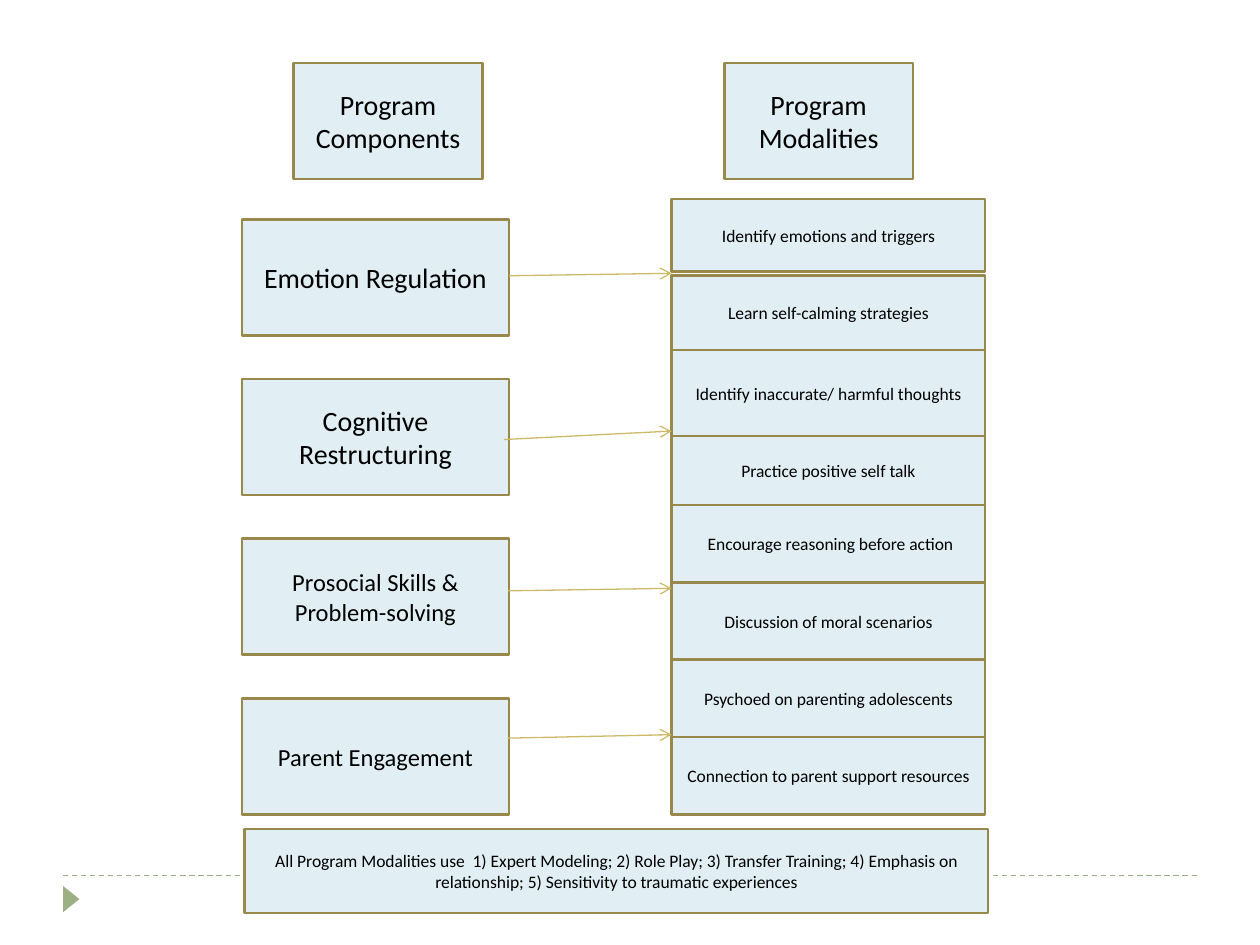
from lxml import etree
from pptx import Presentation
from pptx import util as u
from pptx.dml.color import RGBColor
from pptx.enum import dml, shapes, text
from pptx.oxml.ns import qn

# Content
HEADINGS = [("Program Components", 5.92), ("Program Modalities", 14.6)]  # text, left
COMPONENTS = [  # text, type size
    ("Emotion Regulation", "large"),
    ("Cognitive Restructuring", "large"),
    ("Prosocial Skills & Problem-solving", "medium"),
    ("Parent Engagement", "medium"),
]
MODALITIES = [  # text, height, gap below
    ("Identify emotions and triggers", 1.47, 0.08),
    ("Learn self-calming strategies", 1.5, 0),
    ("Identify inaccurate/ harmful thoughts", 1.73, 0),
    ("Practice positive self talk", 1.39, 0),
    (" Encourage reasoning before action", 1.56, 0),
    ("Discussion of moral scenarios", 1.56, 0),
    ("Psychoed on parenting adolescents", 1.56, 0),
    ("Connection to parent support resources", 1.56, 0),
]
SUMMARY = (
    "All Program Modalities use  1) Expert Modeling; 2) Role Play; "
    "3) Transfer Training; 4) Emphasis on relationship; "
    "5) Sensitivity to traumatic experiences"
)
ARROWS = [  # start x, start y, end y
    (10.26, 5.56, 5.51),
    (10.16, 8.86, 8.69),
    (10.24, 11.91, 11.86),
    (10.24, 14.88, 14.81),
]

THEME = {
    "font": "Calibri",
    "text": RGBColor(0x00, 0x00, 0x00),
    "box": RGBColor(0xE1, 0xEF, 0xF4),
    "border": RGBColor(0x98, 0x89, 0x4B),
    "arrow": RGBColor(0xCE, 0xB9, 0x66),
    "accent": RGBColor(0x9C, 0xB0, 0x84),
    "large": u.Pt(16),
    "medium": u.Pt(14),
    "small": u.Pt(10),
}

# Layout in centimetres
BIG_BOX_HEIGHT = 2.34
HEADING_TOP, HEADING_WIDTH = 1.27, 3.81
COMPONENT_LEFT, COMPONENT_TOP, COMPONENT_WIDTH, COMPONENT_PITCH = 4.88, 4.42, 5.38, 3.22
MODALITY_LEFT, MODALITY_TOP, MODALITY_WIDTH = 13.54, 4.01, 6.32


def add_box(slide, wording, left, top, width, height, size):
    shape = slide.shapes.add_shape(
        shapes.MSO_SHAPE.RECTANGLE, u.Cm(left), u.Cm(top), u.Cm(width), u.Cm(height))
    shape.shadow.inherit = False
    shape.fill.solid()
    shape.fill.fore_color.rgb = THEME["box"]
    shape.line.color.rgb = THEME["border"]
    shape.line.width = u.Pt(1.5)
    frame = shape.text_frame
    frame.word_wrap = True
    frame.vertical_anchor = text.MSO_ANCHOR.MIDDLE
    paragraph = frame.paragraphs[0]
    paragraph.text = wording
    paragraph.alignment = text.PP_ALIGN.CENTER
    paragraph.font.name = THEME["font"]
    paragraph.font.size = THEME[size]
    paragraph.font.color.rgb = THEME["text"]


def add_line(slide, x1, y1, x2, y2, color):
    line = slide.shapes.add_connector(
        shapes.MSO_CONNECTOR.STRAIGHT, u.Cm(x1), u.Cm(y1), u.Cm(x2), u.Cm(y2))
    line.line.color.rgb = THEME[color]
    line.line.width = u.Pt(0.75)
    etree.SubElement(line._element.spPr, qn("a:effectLst"))
    return line


def add_footer_marks(slide):
    rule = add_line(slide, 1.27, 17.65, 24.13, 17.65, "accent")
    rule.line.dash_style = dml.MSO_LINE.DASH
    marker = slide.shapes.add_shape(
        shapes.MSO_SHAPE.ISOSCELES_TRIANGLE, u.Cm(1.17), u.Cm(17.96), u.Cm(0.53), u.Cm(0.33))
    marker.rotation = 90
    marker.shadow.inherit = False
    marker.fill.solid()
    marker.fill.fore_color.rgb = THEME["accent"]
    marker.line.fill.background()


def main():
    presentation = Presentation()
    presentation.slide_width, presentation.slide_height = u.Cm(25.4), u.Cm(19.05)
    slide = presentation.slides.add_slide(presentation.slide_layouts[6])
    add_footer_marks(slide)

    # Column headings
    for wording, left in HEADINGS:
        add_box(slide, wording, left, HEADING_TOP, HEADING_WIDTH, BIG_BOX_HEIGHT, "large")

    # Stacked modalities
    top = MODALITY_TOP
    for wording, height, gap in MODALITIES:
        add_box(slide, wording, MODALITY_LEFT, top, MODALITY_WIDTH, height, "small")
        top += height + gap

    # Summary bar
    add_box(slide, SUMMARY, 4.93, 16.71, 14.99, 1.7, "small")

    # Evenly spaced components
    for row, (wording, size) in enumerate(COMPONENTS):
        add_box(slide, wording, COMPONENT_LEFT, COMPONENT_TOP + row * COMPONENT_PITCH,
                COMPONENT_WIDTH, BIG_BOX_HEIGHT, size)

    # Arrows from components to modalities
    for start_x, start_y, end_y in ARROWS:
        arrow = add_line(slide, start_x, start_y, MODALITY_LEFT, end_y, "arrow")
        etree.SubElement(arrow.line._get_or_add_ln(), qn("a:tailEnd"), type="arrow")

    presentation.save("out.pptx")


if __name__ == "__main__":
    main()
